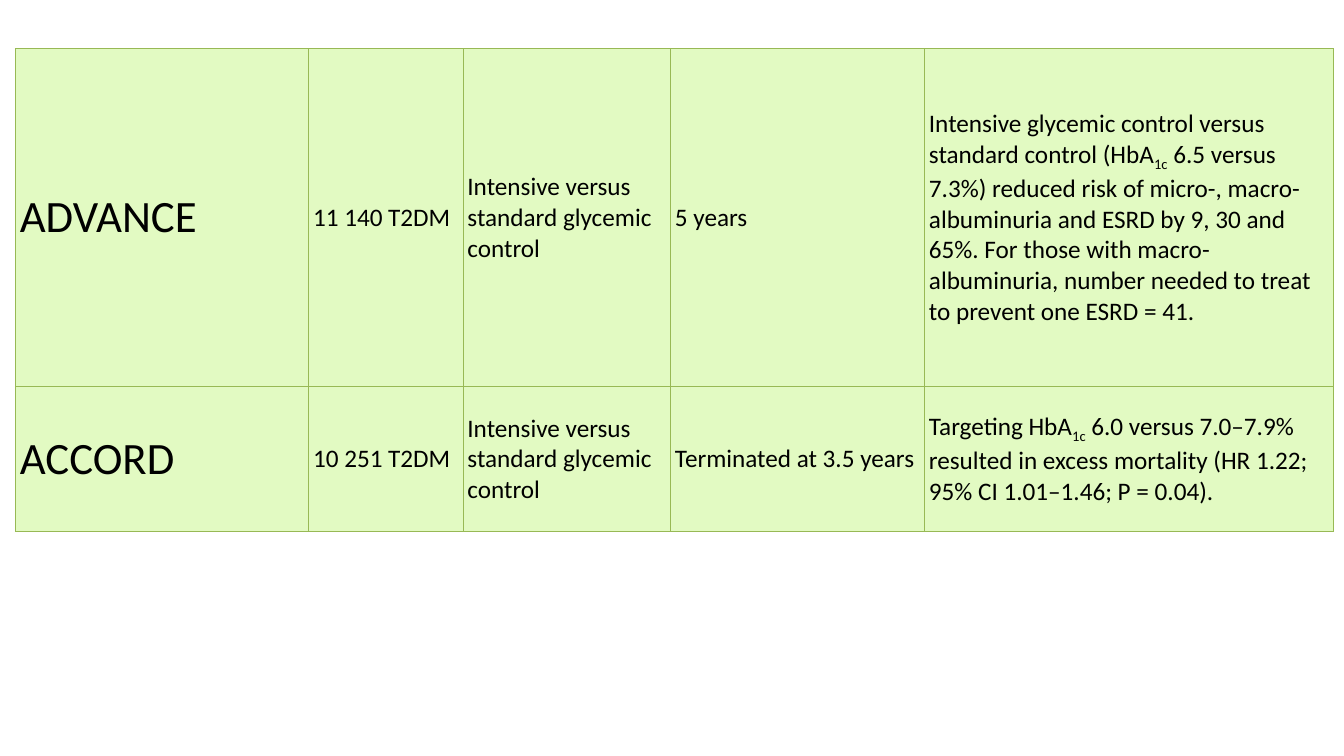
from lxml import etree
from pptx import Presentation
from pptx import util as u
from pptx.dml.color import RGBColor
from pptx.enum import text
from pptx.oxml import ns

BLACK = RGBColor(0x00, 0x00, 0x00)
PALE_GREEN = RGBColor(0xE2, 0xFA, 0xC2)
BORDER_GREEN = RGBColor(0x98, 0xB9, 0x55)

SUBSCRIPT = "1c"
COMPARISON = "Intensive versus standard glycemic control"
TRIALS = [
    ["ADVANCE", "11 140 T2DM", COMPARISON, "5 years",
     ("Intensive glycemic control versus standard control (HbA", SUBSCRIPT,
      " 6.5 versus 7.3%) reduced risk of micro-, macro-albuminuria and ESRD "
      "by 9, 30 and 65%. For those with macro-albuminuria, number needed to "
      "treat to prevent one ESRD = 41.")],
    ["ACCORD", "10 251 T2DM", COMPARISON, "Terminated at 3.5 years",
     ("Targeting HbA", SUBSCRIPT,
      " 6.0 versus 7.0–7.9% resulted in excess mortality "
      "(HR 1.22; 95% CI 1.01–1.46; P = 0.04).")],
]
COLUMN_WIDTHS = [7.39, 3.89, 5.23, 6.4, 10.31]
ROW_HEIGHTS = [8.51, 3.66]
LEFT, TOP = 0.39, 1.23


def write(paragraph, wording, size=18, color=BLACK, font="Calibri"):
    for part in (wording if isinstance(wording, tuple) else (wording,)):
        run = paragraph.add_run()
        run.text = part
        run.font.size = u.Pt(size)
        run.font.name = font
        run.font.color.rgb = color
        if part == SUBSCRIPT:
            run.font._element.set("baseline", "-25000")


def outline(cell, color=BORDER_GREEN, width=0.75):
    properties = cell._tc.get_or_add_tcPr()
    for position, side in enumerate(("lnL", "lnR", "lnT", "lnB")):
        line = etree.Element(ns.qn(f"a:{side}"), w=str(u.Pt(width)))
        solid = etree.SubElement(line, ns.qn("a:solidFill"))
        etree.SubElement(solid, ns.qn("a:srgbClr"), val=str(color))
        properties.insert(position, line)


def main():
    deck = Presentation()
    deck.slide_width, deck.slide_height = u.Cm(33.87), u.Cm(19.05)
    slide = deck.slides.add_slide(deck.slide_layouts[6])
    trials = slide.shapes.add_table(
        len(TRIALS), len(COLUMN_WIDTHS), u.Cm(LEFT), u.Cm(TOP),
        u.Cm(sum(COLUMN_WIDTHS)), u.Cm(sum(ROW_HEIGHTS))).table
    trials.first_row = trials.horz_banding = False
    for column, width in zip(trials.columns, COLUMN_WIDTHS):
        column.width = u.Cm(width)
    for row, height, trial in zip(trials.rows, ROW_HEIGHTS, TRIALS):
        row.height = u.Cm(height)
        for index, (cell, wording) in enumerate(zip(row.cells, trial)):
            cell.margin_left = cell.margin_right = u.Cm(0.11)
            cell.margin_top = cell.margin_bottom = u.Cm(0.06)
            cell.vertical_anchor = text.MSO_ANCHOR.MIDDLE
            cell.fill.solid()
            cell.fill.fore_color.rgb = PALE_GREEN
            outline(cell)
            write(cell.text_frame.paragraphs[0], wording,
                  size=32 if index == 0 else 18)
    deck.save("out.pptx")


if __name__ == "__main__":
    main()
